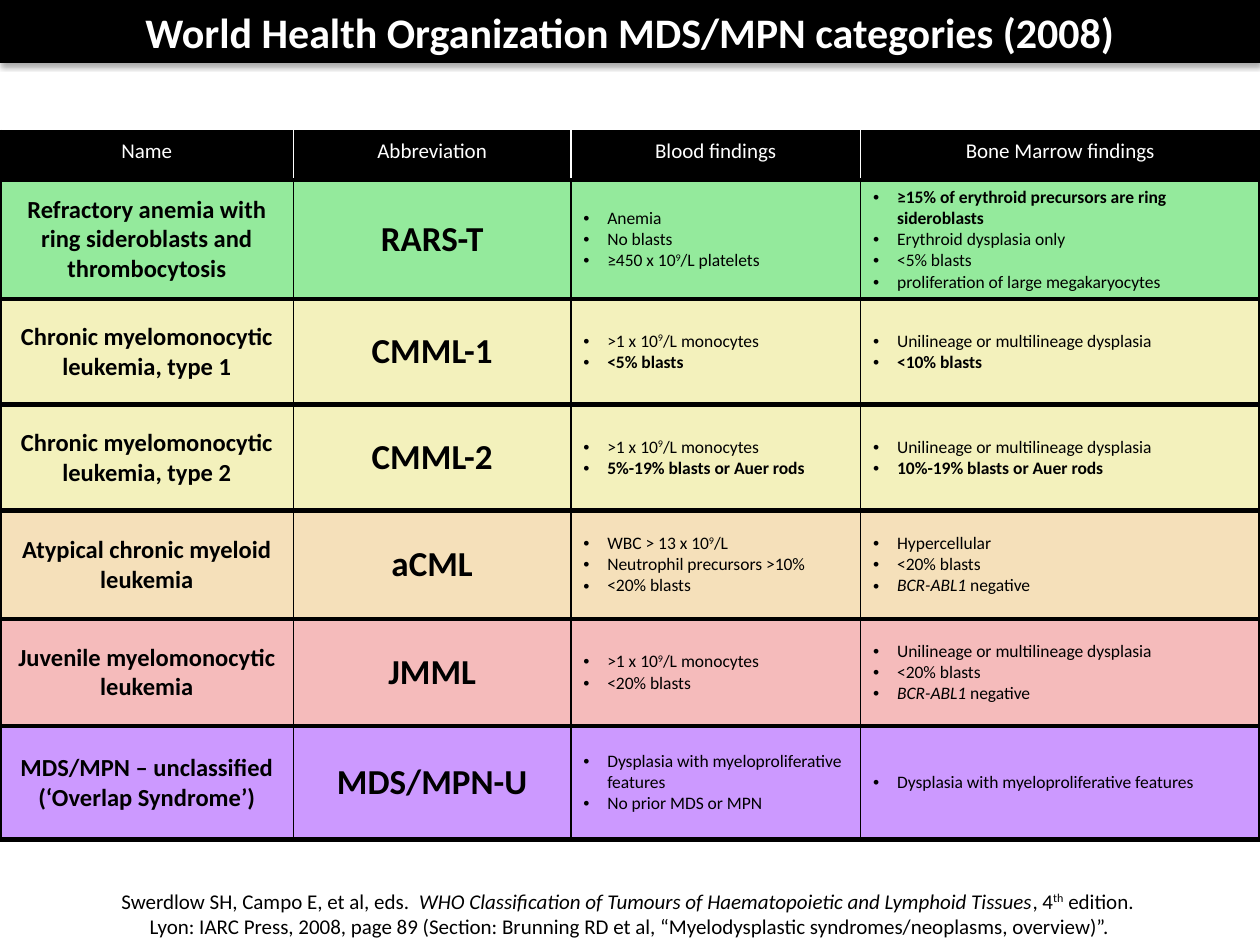
"""Build the slide of WHO MDS/MPN categories."""
from dataclasses import dataclass

from lxml import etree
from pptx import Presentation
from pptx.dml.fill import FillFormat
from pptx.dml.color import RGBColor
from pptx.enum.text import MSO_ANCHOR, MSO_AUTO_SIZE, PP_ALIGN
from pptx.oxml import parse_xml
from pptx.oxml.ns import nsdecls, qn
from pptx.table import _Cell
from pptx.text.text import TextFrame
from pptx.util import Inches, Pt

CENTER, LEFT = PP_ALIGN.CENTER, PP_ALIGN.LEFT
MIDDLE, TOP = MSO_ANCHOR.MIDDLE, MSO_ANCHOR.TOP
FIXED = MSO_AUTO_SIZE.NONE
BLACK, WHITE = "000000", "FFFFFF"
FONT = "Calibri"
INDENT = Inches(0.19)


@dataclass
class Row:
    """One disease; in text, | splits runs, led by * bold, _ italic or ^ raised."""
    name: str
    abbr: str
    blood: list[str]
    marrow: list[str]
    color: str
    height: float
    alpha: int = 50


HEADS = ["Name", "Abbreviation", "Blood findings", "Bone Marrow findings"]
WIDTHS = [2.33, 2.2, 2.3, 3.17]
HEAD_HEIGHT = 0.38
MONO = ">1 x 10|^9|/L monocytes"
LINES = "Unilineage or multilineage dysplasia"
BCR = "_BCR-ABL1| negative"
MIXED = "Dysplasia with myeloproliferative features"
ROWS = [
    Row("Refractory anemia with ring sideroblasts and thrombocytosis", "RARS-T",
        ["Anemia", "No blasts", "≥450 x 10|^9|/L platelets"],
        ["*≥15% of erythroid precursors are ring sideroblasts",
         "Erythroid dysplasia only", "<5% blasts",
         "proliferation of large megakaryocytes"], "2AD63A", 0.81),
    Row("Chronic myelomonocytic leukemia, type 1", "CMML-1",
        [MONO, "*<5% blasts"], [LINES, "*<10% blasts"], "E9E47B", 0.84),
    Row("Chronic myelomonocytic leukemia, type 2", "CMML-2",
        [MONO, "*5%-19% blasts or Auer rods"],
        [LINES, "*10%-19% blasts or Auer rods"], "E9E47B", 0.84),
    Row("Atypical chronic myeloid leukemia", "aCML",
        ["WBC > 13 x 10|^9|/L", "Neutrophil precursors >10%", "<20% blasts"],
        ["Hypercellular", "<20% blasts", BCR], "EDC377", 0.86),
    Row("Juvenile myelomonocytic leukemia", "JMML",
        [MONO, "<20% blasts"], [LINES, "<20% blasts", BCR], "EC7878", 0.85),
    Row("MDS/MPN – unclassified\n(‘Overlap Syndrome’)", "MDS/MPN-U",
        [MIXED, "No prior MDS or MPN"], [MIXED], "CC99FF", 0.9, 100),
]
SOURCE = ("Swerdlow SH, Campo E, et al, eds.  |"
          "_WHO Classification of Tumours of Haematopoietic and Lymphoid Tissues|"
          ", 4|^th| edition. \nLyon: IARC Press, 2008, page 89 (Section: Brunning "
          "RD et al, “Myelodysplastic syndromes/neoplasms, overview)”.")


def paint(fill: FillFormat, color: str) -> None:
    """Make a fill solid in a hex colour."""
    fill.solid()
    fill.fore_color.rgb = RGBColor.from_string(color)


def write(frame: TextFrame, texts: list[str], size: float, color: str = BLACK,
          bold: bool = False, bullet: bool = False) -> None:
    """Write marked-up paragraphs into a text frame."""
    frame.word_wrap = True
    for i, text in enumerate(texts):
        para = frame.add_paragraph() if i else frame.paragraphs[0]
        para.alignment = LEFT if bullet else CENTER
        if bullet:
            props = para._p.get_or_add_pPr()
            props.set("marL", str(INDENT))
            props.set("indent", str(-INDENT))
            props.append(parse_xml(f'<a:buFont {nsdecls("a")} typeface="Arial"/>'))
            props.append(parse_xml(f'<a:buChar {nsdecls("a")} char="•"/>'))
        for part in text.split("|"):
            mark = part[0] if part[0] in "*_^" else ""
            for j, line in enumerate(part[len(mark):].split("\n")):
                if j:
                    para.add_line_break()
                run = para.add_run()
                run.text = line
                font = run.font
                font.name, font.size = FONT, Pt(size)
                font.bold, font.italic = bold or mark == "*", mark == "_"
                paint(font.fill, color)
                if mark == "^":
                    run._r.get_or_add_rPr().set("baseline", "30000")


def shade(cell: _Cell, color: str, alpha: int) -> None:
    """Fill a cell at an opacity in percent."""
    paint(cell.fill, color)
    if alpha < 100:
        tone = cell._tc.tcPr.find(f'{qn("a:solidFill")}/{qn("a:srgbClr")}')
        etree.SubElement(tone, qn("a:alpha"), val=str(alpha * 1000))


def edge(cell: _Cell, row: int, col: int) -> None:
    """Draw the four borders that suit a cell's place in the grid."""
    outer = 2.25 if row else 3
    inner = BLACK if row else WHITE
    last = len(HEADS) - 1
    sides = [
        ("lnL", inner if col else BLACK, 1 if col else outer),
        ("lnR", inner if col < last else BLACK, 1 if col < last else outer),
        ("lnT", BLACK, 2.25 if row in (1, 2) else 3),
        ("lnB", BLACK, 2.25 if row in (0, 1) else 3),
    ]
    props = cell._tc.get_or_add_tcPr()
    for i, (tag, color, width) in enumerate(sides):
        props.insert(i, parse_xml(
            f'<a:{tag} {nsdecls("a")} w="{Pt(width)}"><a:solidFill>'
            f'<a:srgbClr val="{color}"/></a:solidFill></a:{tag}>'))


def draw_title(slide) -> None:
    """Set the title as a black band with a shadow."""
    title = slide.shapes.title
    title.left, title.top = Inches(0), Inches(0)
    title.width, title.height = Inches(10), Inches(0.5)
    paint(title.fill, BLACK)
    frame = title.text_frame
    frame.auto_size, frame.vertical_anchor = FIXED, MIDDLE
    write(frame, ["World Health Organization MDS/MPN categories (2008)"],
          24, WHITE, bold=True)
    title._element.spPr.append(parse_xml(
        f'<a:effectLst {nsdecls("a")}><a:outerShdw blurRad="{Pt(3.1)}" '
        f'dist="{Pt(1.8)}" dir="5400000" rotWithShape="0"><a:srgbClr val="{BLACK}">'
        '<a:alpha val="35000"/></a:srgbClr></a:outerShdw></a:effectLst>'))


def draw_table(slide) -> None:
    """Draw the table of categories."""
    heights = [HEAD_HEIGHT] + [row.height for row in ROWS]
    table = slide.shapes.add_table(
        len(heights), len(HEADS), Inches(0), Inches(1.05),
        Inches(10), Inches(sum(heights))).table
    table.first_row = table.horz_banding = False
    for col, width in zip(table.columns, WIDTHS):
        col.width = Inches(width)
    for line, height in zip(table.rows, heights):
        line.height = Inches(height)
    for c, head in enumerate(HEADS):
        cell = table.cell(0, c)
        cell.vertical_anchor = TOP
        write(cell.text_frame, [head], 12, WHITE)
        shade(cell, BLACK, 100)
        edge(cell, 0, c)
    for r, row in enumerate(ROWS, 1):
        cells = [table.cell(r, c) for c in range(len(HEADS))]
        write(cells[0].text_frame, [row.name], 14, bold=True)
        write(cells[1].text_frame, [row.abbr], 20, bold=True)
        write(cells[2].text_frame, row.blood, 10, bullet=True)
        write(cells[3].text_frame, row.marrow, 10, bullet=True)
        for c, cell in enumerate(cells):
            cell.vertical_anchor = MIDDLE
            shade(cell, row.color, row.alpha)
            edge(cell, r, c)


def main() -> None:
    """Build and save the slide."""
    deck = Presentation()
    deck.slide_width, deck.slide_height = Inches(10), Inches(7.5)
    slide = deck.slides.add_slide(deck.slide_layouts[5])
    draw_title(slide)
    draw_table(slide)
    box = slide.shapes.add_textbox(Inches(0), Inches(7), Inches(10), Inches(0.5))
    write(box.text_frame, [SOURCE], 12)
    deck.save("out.pptx")


if __name__ == "__main__":
    main()
